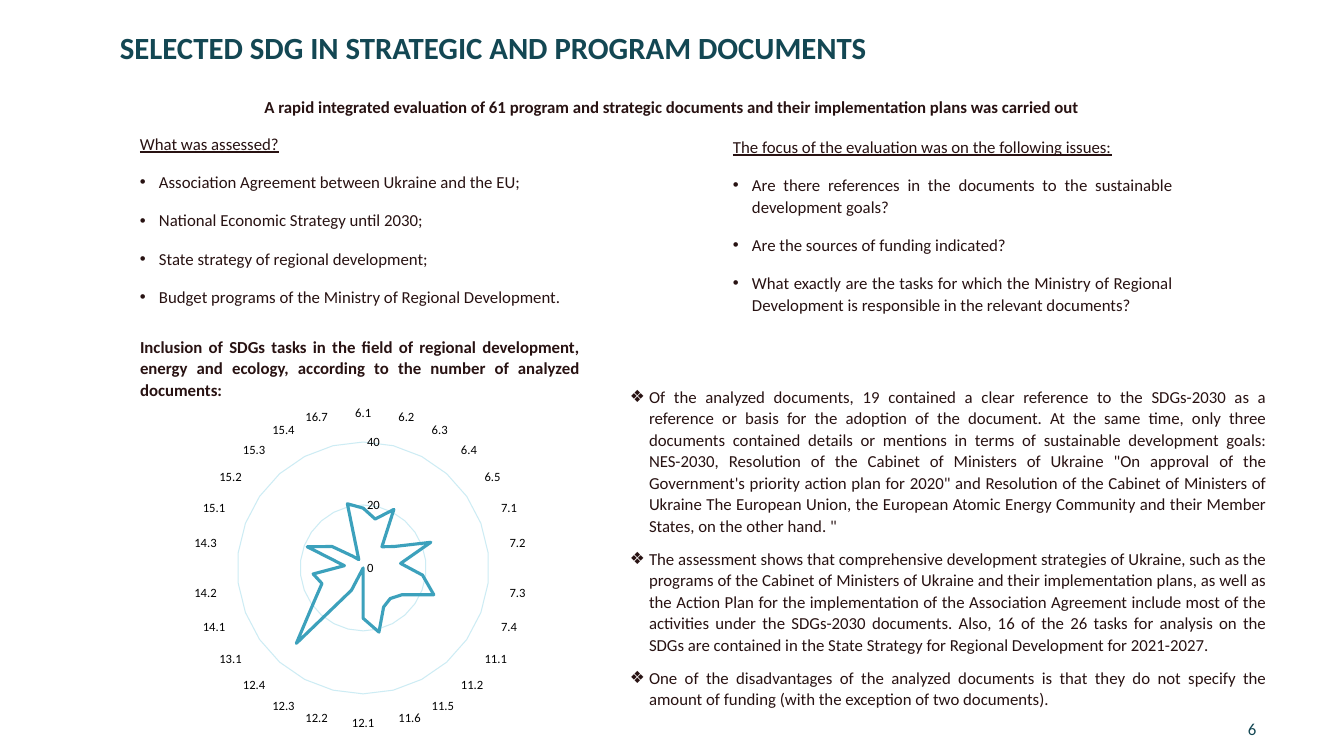
from lxml import etree
from pptx import Presentation
from pptx import util as u
from pptx.chart.data import CategoryChartData
from pptx.dml.color import RGBColor
from pptx.enum import chart as ch, shapes, text
from pptx.oxml.ns import qn

PX = 914400 / 100.8  # EMU in one px
FONT = "Calibri"
TEAL, INK, WHITE, BLACK = "134753", "281212", "FFFFFF", "000000"
GRID, SERIES = "CDECF4", "3CA1BC"


def px(n):
    return u.Emu(round(n * PX))


def colour(value):
    return RGBColor.from_string(value)


class Deck:
    """Holds the style and the current slide."""

    def __init__(self, width, height):
        self.prs = Presentation()
        self.prs.slide_width, self.prs.slide_height = px(width), px(height)
        self.slide = self.prs.slides.add_slide(self.prs.slide_layouts[6])

    def format(self, paragraph, size=12, ink=INK, bold=False, underline=False):
        for run in paragraph.runs:
            font = run.font
            font.name, font.size = FONT, u.Pt(size)
            font.color.rgb = colour(ink)
            font.bold, font.underline = bold, underline

    def bullet(self, paragraph, char):
        p_pr = paragraph._p.get_or_add_pPr()
        p_pr.set("marL", str(px(19)))
        p_pr.set("indent", str(-px(19)))
        etree.SubElement(p_pr, qn("a:buFont")).set("typeface", "Arial")
        etree.SubElement(p_pr, qn("a:buChar")).set("char", char)

    def label(self, x, y, w, h, words, size, bold=False,
              anchor=text.MSO_ANCHOR.TOP, spacing=1.0):
        frame = self.slide.shapes.add_textbox(px(x), px(y), px(w), px(h)).text_frame
        frame.word_wrap = True
        frame.vertical_anchor = anchor
        frame.text = words
        frame.paragraphs[0].line_spacing = spacing
        self.format(frame.paragraphs[0], size, TEAL, bold)

    def panel(self, x, y, w, h, heading=None, items=(), char="•", bold=False,
              underline=False, align=text.PP_ALIGN.JUSTIFY, inset=0,
              before=6, after=6):
        """White rectangle with an optional heading and bulleted items."""
        shape = self.slide.shapes.add_shape(
            shapes.MSO_SHAPE.RECTANGLE, px(x), px(y), px(w), px(h))
        shape.shadow.inherit = False
        shape.fill.solid()
        shape.fill.fore_color.rgb = colour(WHITE)
        shape.line.fill.background()
        frame = shape.text_frame
        frame.word_wrap = True
        frame.vertical_anchor = text.MSO_ANCHOR.TOP
        frame.margin_left = frame.margin_right = px(2 * inset)
        frame.margin_top = frame.margin_bottom = px(inset)
        lines = ([heading] if heading else []) + list(items)
        for i, line in enumerate(lines):
            paragraph = frame.add_paragraph() if i else frame.paragraphs[0]
            paragraph.text = line
            paragraph.alignment = align
            paragraph.line_spacing = 1.07
            paragraph.space_before = u.Pt(before if i else 0)
            paragraph.space_after = u.Pt(after)
            is_heading = line is heading
            if not is_heading:
                self.bullet(paragraph, char)
            self.format(paragraph, bold=bold and is_heading,
                        underline=underline and is_heading)

    def radar(self, x, y, w, h, counts):
        data = CategoryChartData()
        data.categories = list(counts)
        data.add_series("Series 1", list(counts.values()))
        chart = self.slide.shapes.add_chart(
            ch.XL_CHART_TYPE.RADAR, px(x), px(y), px(w), px(h), data).chart
        chart.has_title = chart.has_legend = False
        chart.font.name, chart.font.size = FONT, u.Pt(10)
        chart.font.color.rgb = colour(BLACK)
        plot = chart.plots[0]
        plot.vary_by_categories = False
        line = plot.series[0].format.line
        line.width, line.color.rgb = u.Pt(2.25), colour(SERIES)

        # Axes
        tasks, documents = chart.category_axis, chart.value_axis
        for axis in (tasks, documents):
            axis.major_tick_mark = axis.minor_tick_mark = ch.XL_TICK_MARK.NONE
            axis.tick_labels.font.size = u.Pt(9)
            axis.tick_labels.font.name = FONT
            axis.tick_labels.font.color.rgb = colour(BLACK)
        tasks.has_major_gridlines = False
        documents.minimum_scale, documents.maximum_scale = 0, 40
        documents.major_unit = 20
        documents.has_major_gridlines = True
        documents.format.line.fill.background()
        for line in (tasks.format.line, documents.major_gridlines.format.line):
            line.width, line.color.rgb = u.Pt(0.75), colour(GRID)


DOCUMENTS_PER_TASK = {
    "6.1": 19, "6.2": 16, "6.3": 21, "6.4": 9, "6.5": 12,
    "7.1": 23, "7.2": 12, "7.3": 19, "7.4": 24,
    "11.1": 15, "11.2": 13, "11.5": 14, "11.6": 21,
    "12.1": 16, "12.2": 0, "12.3": 8, "12.4": 32, "13.1": 19,
    "14.1": 14, "14.2": 16, "14.3": 6,
    "15.1": 19, "15.2": 12, "15.3": 5, "15.4": 3, "16.7": 21,
}
ASSESSED = [
    "Association Agreement between Ukraine and the EU;",
    "National Economic Strategy until 2030;",
    "State strategy of regional development;",
    "Budget programs of the Ministry of Regional Development.",
]
ISSUES = [
    "Are there references in the documents to the sustainable development goals?",
    "Are the sources of funding indicated?",
    "What exactly are the tasks for which the Ministry of Regional Development "
    "is responsible in the relevant documents?",
]
FINDINGS = [
    "Of the analyzed documents, 19 contained a clear reference to the SDGs-2030 "
    "as a reference or basis for the adoption of the document. At the same time, "
    "only three documents contained details or mentions in terms of sustainable "
    "development goals: NES-2030, Resolution of the Cabinet of Ministers of "
    'Ukraine "On approval of the Government\'s priority action plan for 2020" and '
    "Resolution of the Cabinet of Ministers of Ukraine The European Union, the "
    "European Atomic Energy Community and their Member States, on the other "
    'hand. "',
    "The assessment shows that comprehensive development strategies of Ukraine, "
    "such as the programs of the Cabinet of Ministers of Ukraine and their "
    "implementation plans, as well as the Action Plan for the implementation of "
    "the Association Agreement include most of the activities under the "
    "SDGs-2030 documents. Also, 16 of the 26 tasks for analysis on the SDGs are "
    "contained in the State Strategy for Regional Development for 2021-2027.",
    "One of the disadvantages of the analyzed documents is that they do not "
    "specify the amount of funding (with the exception of two documents).",
]


def main():
    deck = Deck(1344, 756)
    # Page number, title and summary
    deck.label(1238, 709, 96, 40, "6", 12, anchor=text.MSO_ANCHOR.MIDDLE)
    deck.label(110, 28, 1142, 78, "SELECTED SDG IN STRATEGIC AND PROGRAM DOCUMENTS",
               22, bold=True, spacing=0.9)
    deck.panel(101, 90, 1142, 31,
               "A rapid integrated evaluation of 61 program and strategic documents "
               "and their implementation plans was carried out",
               bold=True, align=text.PP_ALIGN.CENTER, inset=5)
    # Scope and focus
    deck.panel(140, 132, 472, 176, "What was assessed?", ASSESSED, underline=True)
    deck.panel(733, 135, 440, 181,
               "The focus of the evaluation was on the following issues:", ISSUES,
               underline=True)
    # Radar chart with its caption
    deck.panel(140, 335, 440, 65,
               "Inclusion of SDGs tasks in the field of regional development, energy "
               "and ecology, according to the number of analyzed documents:", bold=True)
    deck.radar(101, 399, 518, 338, DOCUMENTS_PER_TASK)
    # Findings
    deck.panel(630, 385, 637, 328, items=FINDINGS, char="❖", before=0, after=8)
    deck.prs.save("out.pptx")


if __name__ == "__main__":
    main()
